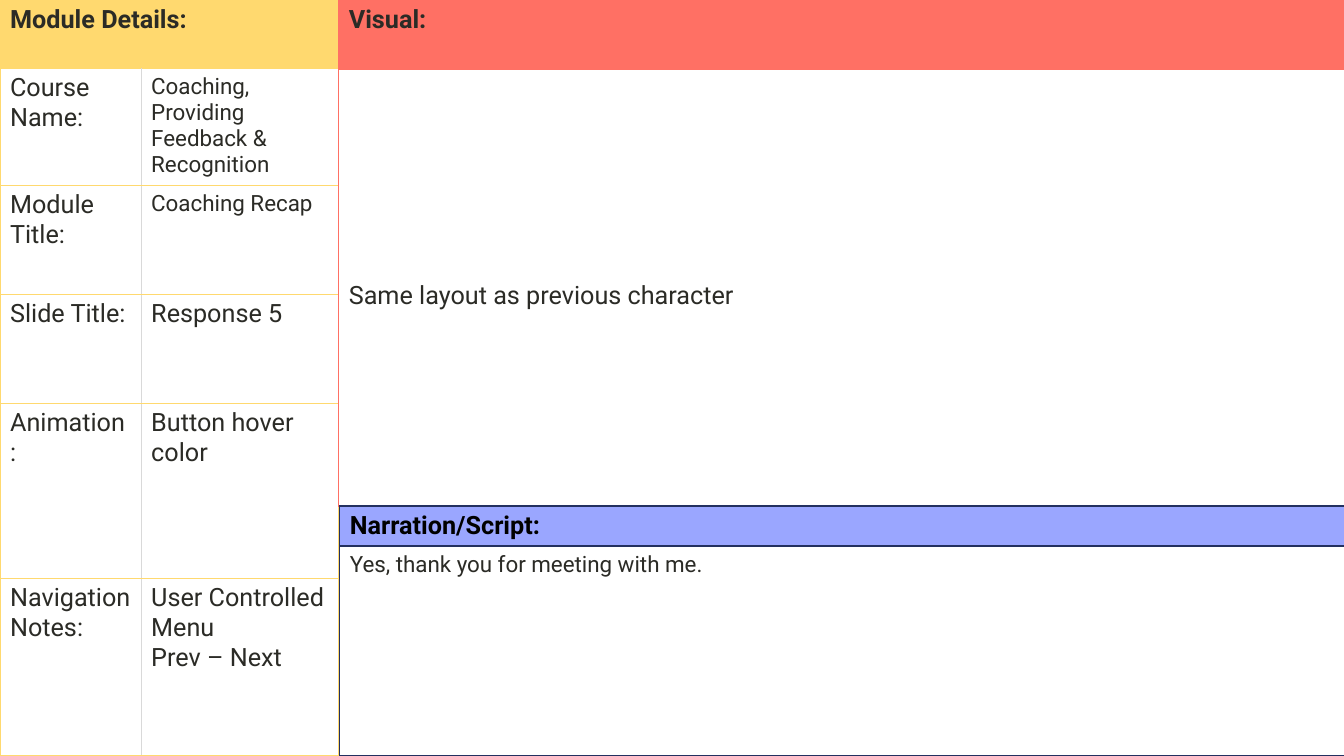
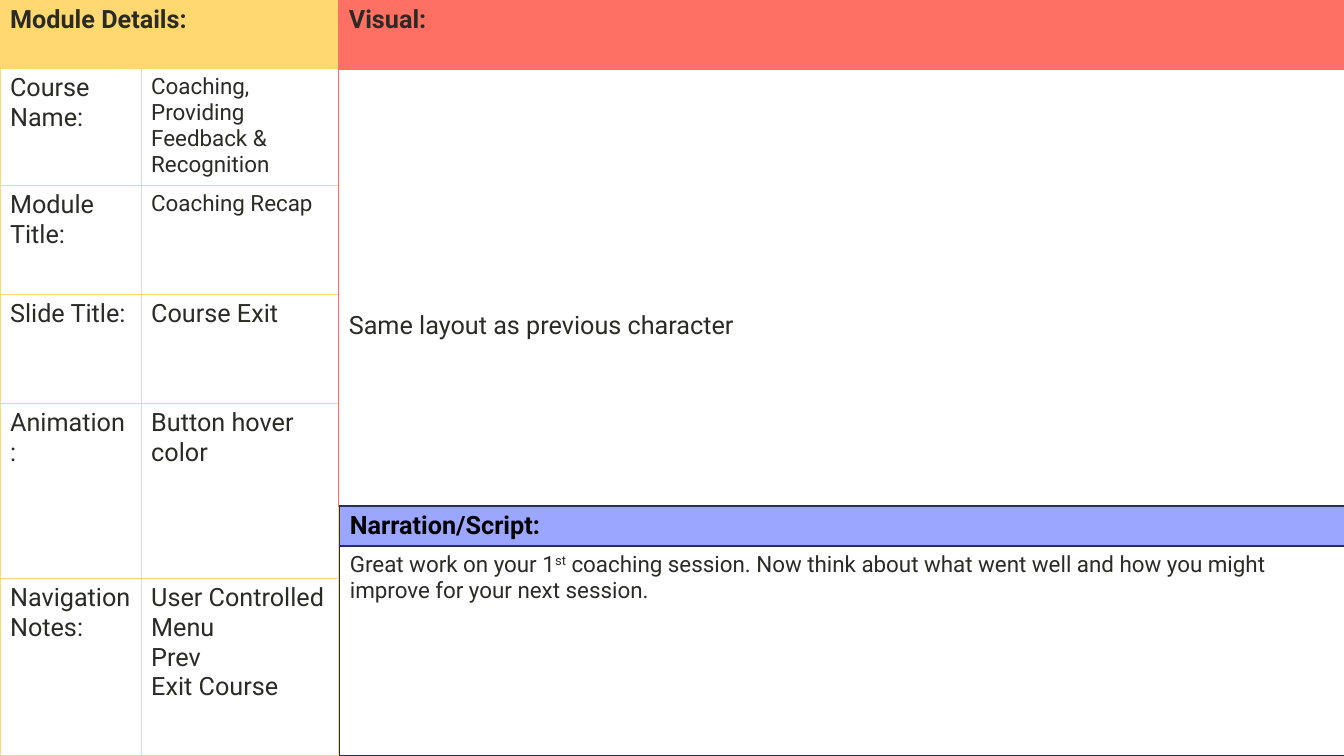
from lxml import etree
from pptx import Presentation
from pptx.dml.color import RGBColor
from pptx.oxml.ns import qn
from pptx.util import Inches, Pt

FONT = "Roboto"
COLORS = {
    "background": "F9F9F9", "panel": "FFFFFF", "text": "2B2B26", "black": "000000",
    "details": "FFD96F", "divider": "D9D9D9", "visual": "FF7064",
    "narration": "9AA6FF", "narration_line": "233060",
}

# Content; "^" encloses superscript text
SLIDES = [
    {
        "title": "Response 5",
        "navigation": ["User Controlled", "Menu", "Prev – Next"],
        "lines_above_visual": 7,
        "script": "Yes, thank you for meeting with me.",
    },
    {
        "title": "Course Exit",
        "navigation": ["User Controlled", "Menu", "Prev", "Exit Course"],
        "lines_above_visual": 8,
        "script": "Great work on your 1^st^ coaching session. Now think about what "
                  "went well and how you might improve for your next session.",
    },
]
VISUAL_NOTE = "Same layout as previous character"

# Layout in inches
DETAIL_COLS = [1.4, 1.96]
DETAIL_ROWS = [0.68, 1.16, 1.08, 1.08, 1.74, 1.76]
RIGHT_WIDTH = 9.98
VISUAL_LEFT, NARRATION_LEFT = 3.36, 3.37
VISUAL_ROWS = [0.69, 4.33]
NARRATION_TOP, NARRATION_HEAD = 5.02, 0.39
SCRIPT_TOP, SCRIPT_HEIGHT = 5.42, 2.08
CELL_MARGIN, LINE_HEIGHT = 0.05, 0.293


def rgb(name):
    return RGBColor.from_string(COLORS[name])


def add_panel(slide, left, top, cols, rows):
    panel = slide.shapes.add_table(
        len(rows), len(cols), Inches(left), Inches(top),
        Inches(sum(cols)), Inches(sum(rows))).table
    panel.first_row = panel.horz_banding = False
    for column, width in zip(panel.columns, cols):
        column.width = Inches(width)
    for row, height in zip(panel.rows, rows):
        row.height = Inches(height)
    return panel


def style_cell(cell, fill, line, left=None, right=None):
    properties = cell._tc.get_or_add_tcPr()
    edges = {"a:lnL": left or line, "a:lnR": right or line, "a:lnT": line, "a:lnB": line}
    for tag, color in edges.items():
        edge = etree.SubElement(properties, qn(tag), w=str(Pt(1)))
        solid = etree.SubElement(edge, qn("a:solidFill"))
        etree.SubElement(solid, qn("a:srgbClr"), val=COLORS[color])
    cell.fill.solid()
    cell.fill.fore_color.rgb = rgb(fill)


def write(cell, lines, size=18, bold=False, color="text"):
    frame = cell.text_frame
    for index, line in enumerate(lines):
        paragraph = frame.add_paragraph() if index else frame.paragraphs[0]
        for part, text in enumerate(line.split("^")):
            run = paragraph.add_run()
            run.text = text
            if part % 2:
                run._r.get_or_add_rPr().set("baseline", "30000")
        font = paragraph.font
        font.name, font.size, font.bold = FONT, Pt(size), bold
        font.color.rgb = rgb(color)


def add_details(slide, content):
    fields = [
        ("Course Name:", ["Coaching, Providing Feedback & Recognition"], 16),
        ("Module Title:", ["Coaching Recap"], 16),
        ("Slide Title:", [content["title"]], 18),
        ("Animation:", ["Button hover color"], 18),
        ("Navigation Notes:", content["navigation"], 18),
    ]
    details = add_panel(slide, 0, 0, DETAIL_COLS, DETAIL_ROWS)
    heading = details.cell(0, 0)
    heading.merge(details.cell(0, 1))
    for column in range(2):
        style_cell(details.cell(0, column), "details", "details")
    write(heading, ["Module Details:"], bold=True)
    for row, (label, value, size) in enumerate(fields, start=1):
        label_cell, value_cell = details.cell(row, 0), details.cell(row, 1)
        style_cell(label_cell, "panel", "details", right="divider")
        style_cell(value_cell, "panel", "details", left="divider")
        write(label_cell, [label])
        write(value_cell, value, size)


def add_visual(slide, content):
    visual = add_panel(slide, VISUAL_LEFT, 0, [RIGHT_WIDTH], VISUAL_ROWS)
    heading, body = visual.cell(0, 0), visual.cell(1, 0)
    style_cell(heading, "visual", "visual")
    style_cell(body, "panel", "visual")
    write(heading, ["Visual:"], bold=True)
    write(body, [VISUAL_NOTE])
    body.margin_top = Inches(CELL_MARGIN + content["lines_above_visual"] * LINE_HEIGHT)


def add_narration(slide, content):
    heading = add_panel(slide, NARRATION_LEFT, NARRATION_TOP,
                        [RIGHT_WIDTH], [NARRATION_HEAD]).cell(0, 0)
    style_cell(heading, "narration", "narration_line")
    write(heading, ["Narration/Script:"], bold=True, color="black")
    script = add_panel(slide, NARRATION_LEFT, SCRIPT_TOP,
                       [RIGHT_WIDTH], [SCRIPT_HEIGHT]).cell(0, 0)
    style_cell(script, "panel", "narration_line")
    write(script, [content["script"]], size=16)


def main():
    deck = Presentation()
    deck.slide_width, deck.slide_height = Inches(13.33), Inches(7.5)
    blank = deck.slide_layouts[6]
    background = deck.slide_master.background.fill
    background.solid()
    background.fore_color.rgb = rgb("background")
    for content in SLIDES:
        slide = deck.slides.add_slide(blank)
        add_details(slide, content)
        add_visual(slide, content)
        add_narration(slide, content)
    deck.save("out.pptx")


if __name__ == "__main__":
    main()
